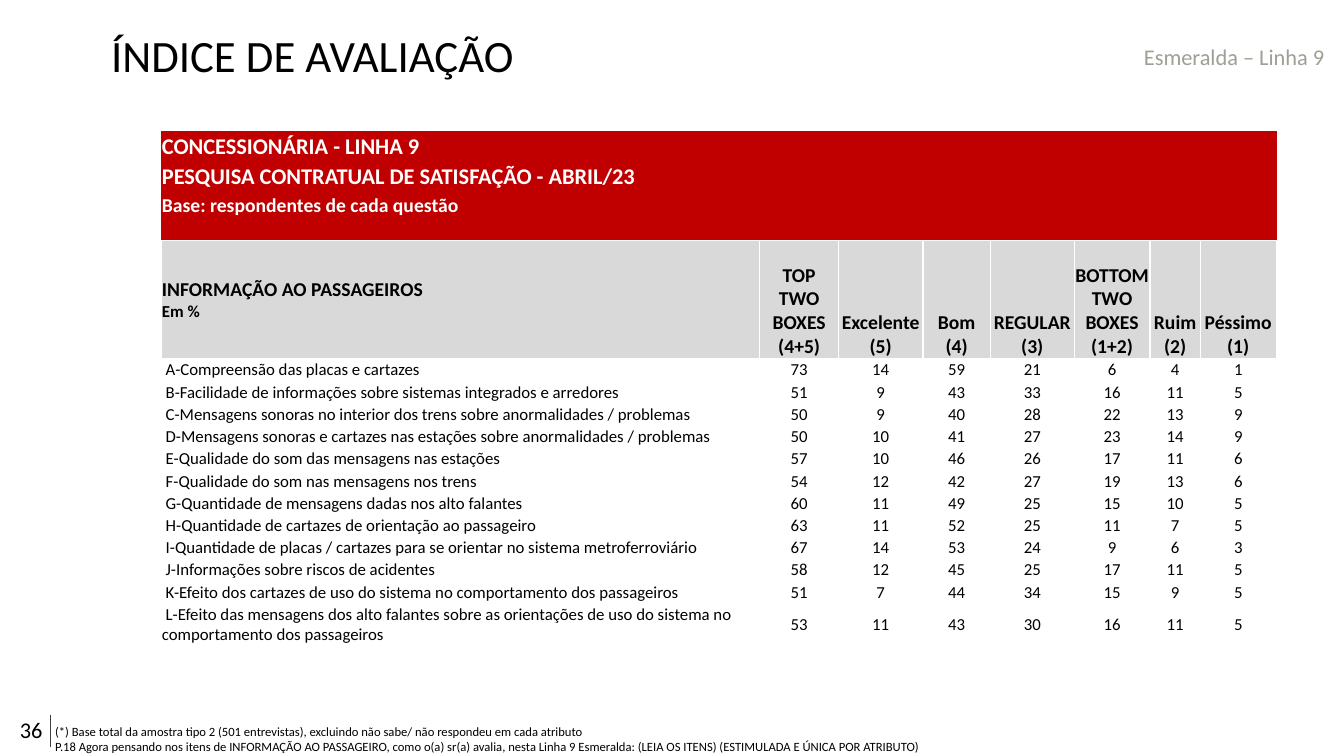
from dataclasses import dataclass

from lxml import etree
from pptx import Presentation
from pptx.dml.color import RGBColor
from pptx.enum.shapes import MSO_CONNECTOR
from pptx.enum.text import MSO_ANCHOR, PP_ALIGN
from pptx.oxml import parse_xml
from pptx.oxml.ns import nsdecls, qn
from pptx.util import Cm, Pt

LEFT, CENTER = PP_ALIGN.LEFT, PP_ALIGN.CENTER
MIDDLE, BOTTOM = MSO_ANCHOR.MIDDLE, MSO_ANCHOR.BOTTOM
STRAIGHT = MSO_CONNECTOR.STRAIGHT
NO_STYLE = "{2D5ABB26-0587-4C30-8999-92F81FD0307C}"


@dataclass(frozen=True)
class Theme:
    font: str = "Calibri"
    black: str = "000000"
    white: str = "FFFFFF"
    red: str = "C00000"
    header_gray: str = "D9D9D9"
    line_label: str = "9F9F95"
    rule: str = "404040"
    title_size: int = 32
    large: int = 16
    medium: int = 14
    small: int = 12
    note: int = 9


theme = Theme()


def write(frame, lines, color, align=LEFT, bold=False):
    """Fill a text frame with one paragraph per (text, size) pair."""
    for index, (text, size) in enumerate(lines):
        paragraph = frame.paragraphs[0] if index == 0 else frame.add_paragraph()
        paragraph.alignment = align
        paragraph.text = text
        if not text:
            paragraph._p.get_or_add_endParaRPr().set("sz", str(size * 100))
        for run in paragraph.runs:
            values = {"name": theme.font, "size": Pt(size), "bold": bold}
            for name, value in values.items():
                setattr(run.font, name, value)
            run.font.color.rgb = RGBColor.from_string(color)


def add_grid(slide, top, column_widths, row_heights):
    """Add an unstyled table with tight cell margins."""
    frame = slide.shapes.add_table(
        len(row_heights), len(column_widths), Cm(4.06), Cm(top),
        Cm(sum(column_widths)), Cm(sum(row_heights)))
    table = frame.table
    table.first_row = table.horz_banding = False
    table._tbl.tblPr.find(qn("a:tableStyleId")).text = NO_STYLE
    for column, width in zip(table.columns, column_widths):
        column.width = Cm(width)
    for row, height in zip(table.rows, row_heights):
        row.height = Cm(height)
    tight = {"margin_left": Cm(0.02), "margin_right": Cm(0.02),
             "margin_top": Cm(0.02), "margin_bottom": 0,
             "vertical_anchor": MIDDLE}
    for cell in table.iter_cells():
        for name, value in tight.items():
            setattr(cell, name, value)
    return table


prs = Presentation()
prs.slide_width, prs.slide_height = Cm(33.87), Cm(19.05)
slide = prs.slides.add_slide(prs.slide_layouts[6])

# Rule beside the page number
rule = slide.shapes.add_connector(STRAIGHT, Cm(1.27), Cm(18.01), Cm(1.27), Cm(18.82))
rule.line.color.rgb = RGBColor.from_string(theme.rule)
rule.line.width = Pt(0.5)
etree.SubElement(rule._element.spPr, qn("a:effectLst"))

# Survey banner
banner_lines = [
    ("CONCESSIONÁRIA - LINHA 9", theme.large),
    ("PESQUISA CONTRATUAL DE SATISFAÇÃO - ABRIL/23", theme.large),
    ("Base: respondentes de cada questão", theme.medium),
    ("", theme.small),
]
banner = add_grid(slide, 3.3, [13.18, 1.96, 2.16, 1.52, 2.16, 2.59, 1.52, 3.02],
                  [0.76, 0.76, 0.71, 0.53])
for row, line in enumerate(banner_lines):
    for column in range(len(banner.columns)):
        cell = banner.cell(row, column)
        cell.fill.solid()
        cell.fill.fore_color.rgb = RGBColor.from_string(theme.red)
        content = line if column == 0 else ("", theme.small)
        write(cell.text_frame, [content], theme.white, bold=True)
banner.cell(1, 0).merge(banner.cell(1, 1))

# Ratings by attribute, in %
ratings_header = ["TOP\vTWO BOXES (4+5)", "Excelente (5)", "Bom\v(4)", "REGULAR (3)",
                  "BOTTOM TWO BOXES (1+2)", "Ruim (2)", "Péssimo (1)"]
ratings = [
    ("A-Compreensão das placas e cartazes", 73, 14, 59, 21, 6, 4, 1),
    ("B-Facilidade de informações sobre sistemas integrados e arredores",
     51, 9, 43, 33, 16, 11, 5),
    ("C-Mensagens sonoras no interior dos trens sobre anormalidades / problemas",
     50, 9, 40, 28, 22, 13, 9),
    ("D-Mensagens sonoras e cartazes nas estações sobre anormalidades / problemas",
     50, 10, 41, 27, 23, 14, 9),
    ("E-Qualidade do som das mensagens nas estações", 57, 10, 46, 26, 17, 11, 6),
    ("F-Qualidade do som nas mensagens nos trens", 54, 12, 42, 27, 19, 13, 6),
    ("G-Quantidade de mensagens dadas nos alto falantes", 60, 11, 49, 25, 15, 10, 5),
    ("H-Quantidade de cartazes de orientação ao passageiro", 63, 11, 52, 25, 11, 7, 5),
    ("I-Quantidade de placas / cartazes para se orientar no sistema metroferroviário",
     67, 14, 53, 24, 9, 6, 3),
    ("J-Informações sobre riscos de acidentes", 58, 12, 45, 25, 17, 11, 5),
    ("K-Efeito dos cartazes de uso do sistema no comportamento dos passageiros",
     51, 7, 44, 34, 15, 9, 5),
    ("L-Efeito das mensagens dos alto falantes sobre as orientações de uso do sistema no "
     "comportamento dos passageiros", 53, 11, 43, 30, 16, 11, 5),
]
grid = add_grid(slide, 6.07, [15.09, 1.98, 2.13, 1.7, 2.11, 1.91, 1.27, 1.91],
                [2.97] + [0.56] * 11 + [1.07])
for cell in grid.iter_cells():
    for position, side in enumerate(("lnL", "lnR", "lnT", "lnB")):
        cell._tc.get_or_add_tcPr().insert(position, parse_xml(
            f'<a:{side} {nsdecls("a")} w="12700"><a:solidFill>'
            f'<a:srgbClr val="{theme.white}"/></a:solidFill></a:{side}>'))

write(grid.cell(0, 0).text_frame,
      [("INFORMAÇÃO AO PASSAGEIROS", theme.medium), ("Em %", theme.small)],
      theme.black, bold=True)
for column, heading in enumerate(ratings_header, start=1):
    cell = grid.cell(0, column)
    cell.vertical_anchor = BOTTOM
    write(cell.text_frame, [(heading, theme.medium)], theme.black, CENTER, bold=True)
for column in range(len(grid.columns)):
    fill = grid.cell(0, column).fill
    fill.solid()
    fill.fore_color.rgb = RGBColor.from_string(theme.header_gray)

for row, (attribute, *scores) in enumerate(ratings, start=1):
    write(grid.cell(row, 0).text_frame, [(f" {attribute}", theme.small)], theme.black)
    for column, score in enumerate(scores, start=1):
        write(grid.cell(row, column).text_frame, [(str(score), theme.small)],
              theme.black, CENTER)

# Title, line label, page number and footnotes
no_insets = {"margin_left": Cm(0.03), "margin_top": Cm(0.06),
             "margin_right": 0, "margin_bottom": 0}
captions = [
    ((0.25, 17.91, 1.42, 0.94), [("36", theme.large)], theme.black,
     {"word_wrap": False}),
    ((28.58, 0.97, 5.11, 0.94), [("Esmeralda – Linha 9", theme.large)],
     theme.line_label, {"word_wrap": False}),
    ((1.14, 18.11, 26.31, 1.02), [
        ("(*) Base total da amostra tipo 2 (501 entrevistas), excluindo não sabe/ "
         "não respondeu em cada atributo", theme.note),
        ("P.18 Agora pensando nos itens de INFORMAÇÃO AO PASSAGEIRO, como o(a) sr(a) "
         "avalia, nesta Linha 9 Esmeralda: (LEIA OS ITENS) (ESTIMULADA E ÚNICA POR "
         "ATRIBUTO)", theme.note),
    ], theme.black, {"word_wrap": True}),
    ((2.77, 0.64, 25.37, 1.4), [("ÍNDICE DE AVALIAÇÃO", theme.title_size)],
     theme.black, {"word_wrap": True, **no_insets}),
]
for place, lines, color, frame_format in captions:
    frame = slide.shapes.add_textbox(*map(Cm, place)).text_frame
    for name, value in frame_format.items():
        setattr(frame, name, value)
    write(frame, lines, color)

prs.save("out.pptx")
